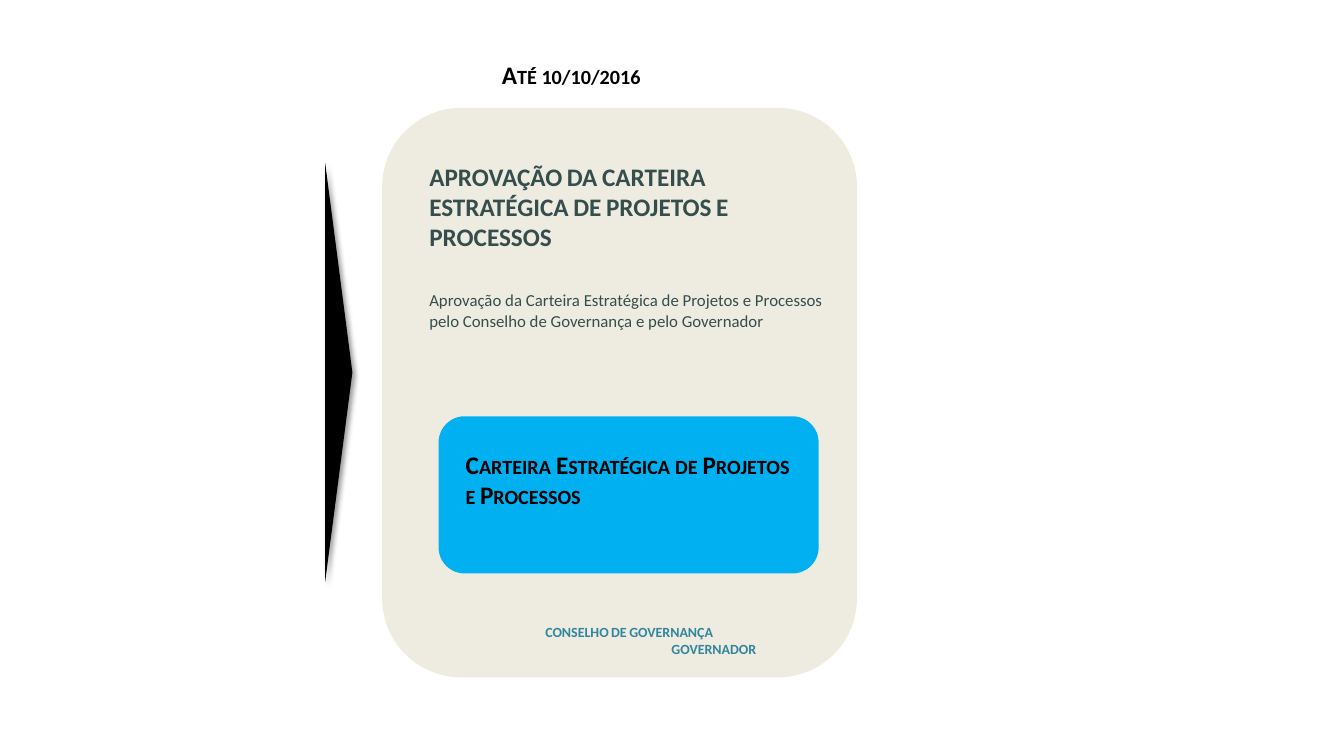
from lxml import etree
from pptx import Presentation
from pptx import util as u
from pptx.dml import color
from pptx.enum import shapes, text
from pptx.oxml import ns

PX = 9144
LEFT = text.PP_ALIGN.LEFT
CENTER = text.PP_ALIGN.CENTER
JUSTIFY = text.PP_ALIGN.JUSTIFY


def rgb(value):
    """Turn a hex string into a colour."""
    return color.RGBColor.from_string(value)


def place(box, left, top, width, height):
    """Return the EMU frame of a part offset from its box."""
    return [n * PX for n in (box[0] + left, box[1] + top, width, height)]


def add_panel(slide, kind, frame, fill):
    """Add a filled preset shape without outline or shadow."""
    shape = slide.shapes.add_shape(kind, *frame)
    shape.shadow.inherit = False
    shape.fill.solid()
    shape.fill.fore_color.rgb = rgb(fill)
    shape.line.fill.background()
    return shape


def add_label(slide, frame, wording, size, fill, align=LEFT, heading=True):
    """Add a wrapped text box, in bold small capitals for headings."""
    text_frame = slide.shapes.add_textbox(*frame).text_frame
    text_frame.word_wrap = True
    text_frame.text = wording
    for paragraph in text_frame.paragraphs:
        paragraph.alignment = align
        for run in paragraph.runs:
            run.font.name = "Calibri"
            run.font.size = u.Pt(size)
            run.font.bold = heading
            run.font.color.rgb = rgb(fill)
            if heading:
                run._r.get_or_add_rPr().set("cap", "small")
    return text_frame


def add_arrow(slide, box):
    """Add the triangle pointing right, with its soft shadow."""
    arrow = add_panel(slide, shapes.MSO_SHAPE.ISOSCELES_TRIANGLE, place(box, 0, 0, *box[2:]), "000000")
    arrow.rotation = 90
    effects = arrow._element.spPr.find(ns.qn("a:effectLst"))
    shadow = etree.SubElement(effects, ns.qn("a:outerShdw"), blurRad=str(u.Pt(4)),
                              dist=str(u.Pt(3)), dir="2700000", algn="tl", rotWithShape="0")
    tint = etree.SubElement(shadow, ns.qn("a:srgbClr"), val="000000")
    etree.SubElement(tint, ns.qn("a:alpha"), val="40000")


def add_stage(slide, box):
    """Add the approval stage card with its date, texts and product."""
    rounded = shapes.MSO_SHAPE.ROUNDED_RECTANGLE
    add_panel(slide, rounded, place(box, 0, 0, *box[2:]), "EEECE1")
    add_label(slide, place(box, 37, 176, 410, 90),
              "Aprovação da Carteira Estratégica de Projetos e Processos "
              "pelo Conselho de Governança e pelo Governador",
              12, "354D4C", JUSTIFY, heading=False)
    add_label(slide, place(box, 37, 48, 434, 286),
              "APROVAÇÃO DA CARTEIRA ESTRATÉGICA DE PROJETOS E PROCESSOS", 18, "354D4C")
    owners = add_label(slide, place(box, 18, 507, 454, 56),
                       "CONSELHO DE GOVERNANÇA\nGOVERNADOR", 10, "31859C", CENTER)
    governor = owners.paragraphs[1]._p.get_or_add_pPr()
    governor.set("marL", str(84 * PX))
    governor.set("indent", "0")
    add_panel(slide, rounded, place(box, 56, 306, 377, 156), "00B0F0")
    add_label(slide, place(box, 73, 334, 341, 232),
              "Carteira Estratégica de Projetos e Processos", 18, "000000", JUSTIFY)
    add_label(slide, place(box, 109, -53, 234, 52), "Até 10/10/2016", 18, "000000")


def main():
    """Build and save the presentation."""
    presentation = Presentation()
    presentation.slide_width = 1333 * PX
    presentation.slide_height = 750 * PX
    slide = presentation.slides.add_slide(presentation.slide_layouts[6])
    add_stage(slide, (379, 107, 471, 565))
    add_arrow(slide, (128, 356, 416, 27))
    presentation.save("out.pptx")


if __name__ == "__main__":
    main()
